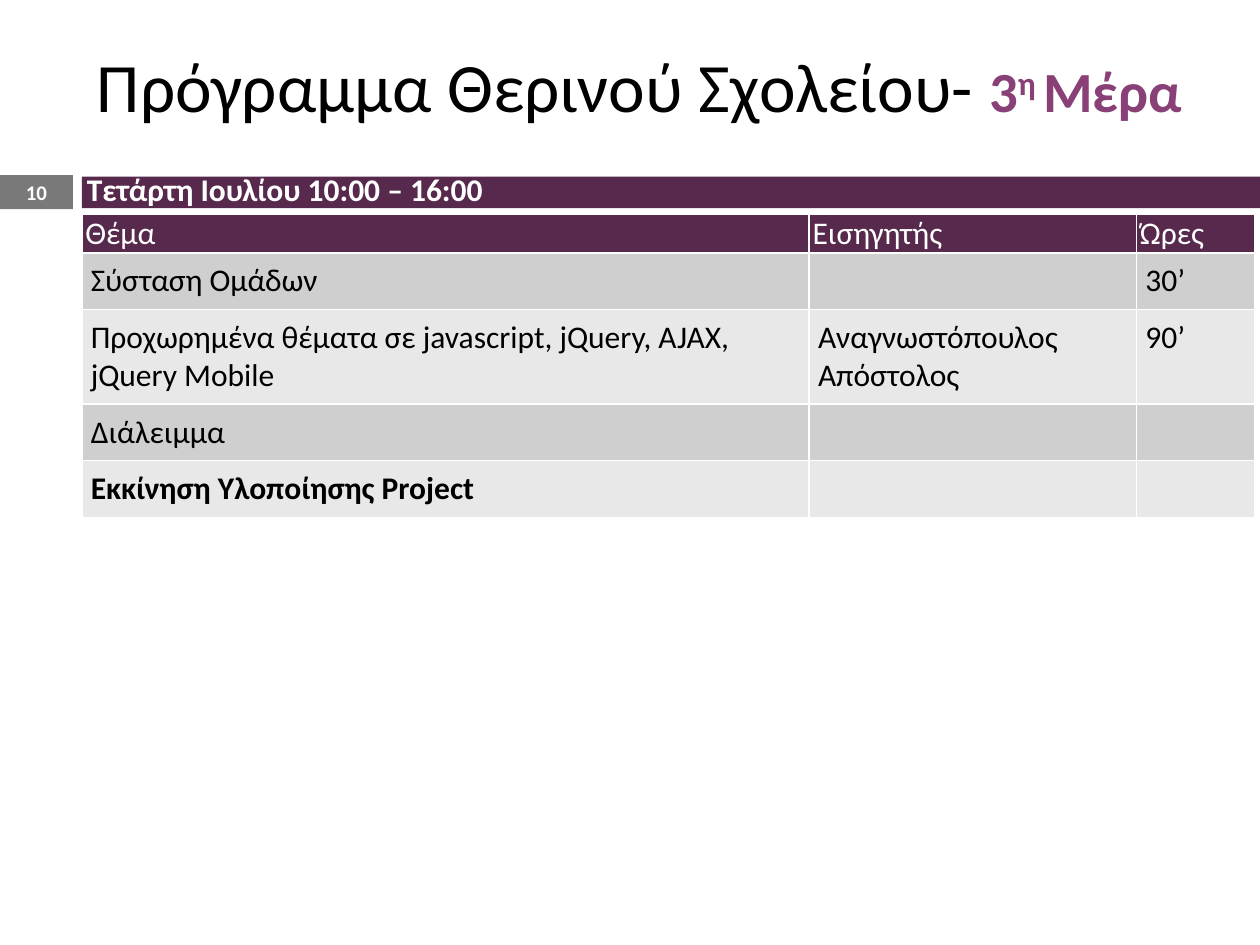
import pptx
import pptx.util
import pptx.dml.color
import pptx.enum.shapes
import pptx.enum.text
import pptx.oxml
import pptx.oxml.ns

Cm, Pt = pptx.util.Cm, pptx.util.Pt
ANCHOR, ALIGN = pptx.enum.text.MSO_ANCHOR, pptx.enum.text.PP_ALIGN

THEME = {
    "font": "Calibri",
    "colors": {"plum": "57294C", "accent": "884077", "grey": "797979", "white": "FFFFFF",
               "black": "000000", "dark band": "CFCFCF", "light band": "E8E8E8"},
    "sizes": {"title": 39.6, "day": 32.4, "body": 18, "number": 11.9},
}

DAY = {"size": "day", "color": "accent", "bold": True}
TITLE = [
    ("Πρόγραμμα Θερινού Σχολείου- ", {"size": "title"}),
    ("3", DAY),
    ("η ", {**DAY, "baseline": 30000}),
    ("Μέρα", DAY),
]
DATE = "Τετάρτη Ιουλίου 10:00 – 16:00"
PAGE_NUMBER = "10"
HEADER = ("Θέμα", "Εισηγητής", "Ώρες")
SESSIONS = [
    ("Σύσταση Ομάδων", "", "30’"),
    ("Προχωρημένα θέματα σε javascript, jQuery, AJAX, jQuery Mobile",
     "Αναγνωστόπουλος Απόστολος", "90’"),
    ("Διάλειμμα", "", ""),
    ("Εκκίνηση Υλοποίησης Project", "", ""),
]
BOLD_SESSION = SESSIONS[-1]

SLIDE_WIDTH, SLIDE_HEIGHT = 25.4, 19.05
BAR_LEFT, BAR_TOP, BAR_HEIGHT = 1.65, 3.56, 0.64
NUMBER_WIDTH = 1.47
TABLE_TOP = 4.32
COLUMN_WIDTHS = (14.66, 6.6, 2.39)
HEADER_HEIGHT, LINE_HEIGHT, ROW_PADDING = 0.76, 0.76, 0.38
SESSION_LINES = (1, 2, 1, 1)


def color(name):
    return pptx.dml.color.RGBColor.from_string(THEME["colors"][name])


def add_span(para, text, size="body", color_name="black", bold=False, baseline=None):
    span = para.add_run()
    span.text = text
    formats = {"name": THEME["font"], "size": Pt(THEME["sizes"][size]), "bold": bold}
    for key, value in formats.items():
        setattr(span.font, key, value)
    span.font.color.rgb = color(color_name)
    if baseline:
        span.font._element.set("baseline", str(baseline))


def format_frame(frame, **formats):
    for key, value in formats.items():
        setattr(frame, key, value)


def add_bar(page, left, top, width, height, fill):
    bar = page.shapes.add_shape(pptx.enum.shapes.MSO_SHAPE.RECTANGLE,
                                Cm(left), Cm(top), Cm(width), Cm(height))
    bar.shadow.inherit = False
    bar.fill.solid()
    bar.fill.fore_color.rgb = color(fill)
    bar.line.fill.background()
    return bar


def add_borders(cell):
    properties = cell._tc.get_or_add_tcPr()
    for index, side in enumerate(("lnL", "lnR", "lnT", "lnB")):
        properties.insert(index, pptx.oxml.parse_xml(
            f'<a:{side} {pptx.oxml.ns.nsdecls("a")} w="{Pt(1)}"><a:solidFill>'
            f'<a:srgbClr val="{THEME["colors"]["white"]}"/></a:solidFill></a:{side}>'))


def fill_cell(cell, text, fill, color_name, bold, side_margin, end_margin):
    cell.fill.solid()
    cell.fill.fore_color.rgb = color(fill)
    add_borders(cell)
    format_frame(cell, margin_left=Cm(side_margin), margin_right=Cm(side_margin),
                 margin_top=Cm(end_margin), margin_bottom=Cm(end_margin))
    if text:
        add_span(cell.text_frame.paragraphs[0], text, color_name=color_name, bold=bold)


def add_schedule(page):
    heights = [HEADER_HEIGHT] + [n * LINE_HEIGHT + ROW_PADDING for n in SESSION_LINES]
    table = page.shapes.add_table(
        len(heights), len(COLUMN_WIDTHS), Cm(BAR_LEFT), Cm(TABLE_TOP),
        Cm(sum(COLUMN_WIDTHS)), Cm(sum(heights))).table
    for column, width in zip(table.columns, COLUMN_WIDTHS):
        column.width = Cm(width)
    for row, height in zip(table.rows, heights):
        row.height = Cm(height)
    for column, text in enumerate(HEADER):
        fill_cell(table.cell(0, column), text, "plum", "white", False, 0.07, 0)
    for row, session in enumerate(SESSIONS, start=1):
        band = "dark band" if row % 2 else "light band"
        for column, text in enumerate(session):
            fill_cell(table.cell(row, column), text, band, "black",
                      session is BOLD_SESSION, 0.18, 0.18)


def add_title(page):
    title = page.shapes.title
    title.left, title.top, title.width, title.height = Cm(1.7), Cm(0.33), Cm(23.01), Cm(2.74)
    format_frame(title.text_frame, vertical_anchor=ANCHOR.MIDDLE, word_wrap=True,
                 auto_size=pptx.enum.text.MSO_AUTO_SIZE.NONE)
    para = title.text_frame.paragraphs[0]
    para.alignment = ALIGN.LEFT
    for text, style in TITLE:
        add_span(para, text, style["size"], style.get("color", "black"),
                 style.get("bold", False), style.get("baseline"))


def add_date(page):
    box = page.shapes.add_textbox(Cm(1.5), Cm(3.3), Cm(12.19), Cm(1.02))
    format_frame(box.text_frame, word_wrap=True,
                 auto_size=pptx.enum.text.MSO_AUTO_SIZE.SHAPE_TO_FIT_TEXT)
    add_span(box.text_frame.paragraphs[0], DATE, color_name="white", bold=True)


def add_page_number(page):
    box = add_bar(page, 0, 3.53, NUMBER_WIDTH, 0.69, "grey")
    format_frame(box.text_frame, vertical_anchor=ANCHOR.MIDDLE, margin_top=0, margin_bottom=0)
    para = box.text_frame.paragraphs[0]
    para.alignment = ALIGN.CENTER
    add_span(para, PAGE_NUMBER, "number", "white", True)


def main():
    deck = pptx.Presentation()
    deck.slide_width, deck.slide_height = Cm(SLIDE_WIDTH), Cm(SLIDE_HEIGHT)
    page = deck.slides.add_slide(deck.slide_layouts.get_by_name("Title Only"))
    add_bar(page, BAR_LEFT, BAR_TOP, SLIDE_WIDTH - BAR_LEFT, BAR_HEIGHT, "plum")
    add_schedule(page)
    add_date(page)
    add_page_number(page)
    add_title(page)
    deck.save("out.pptx")


if __name__ == "__main__":
    main()
